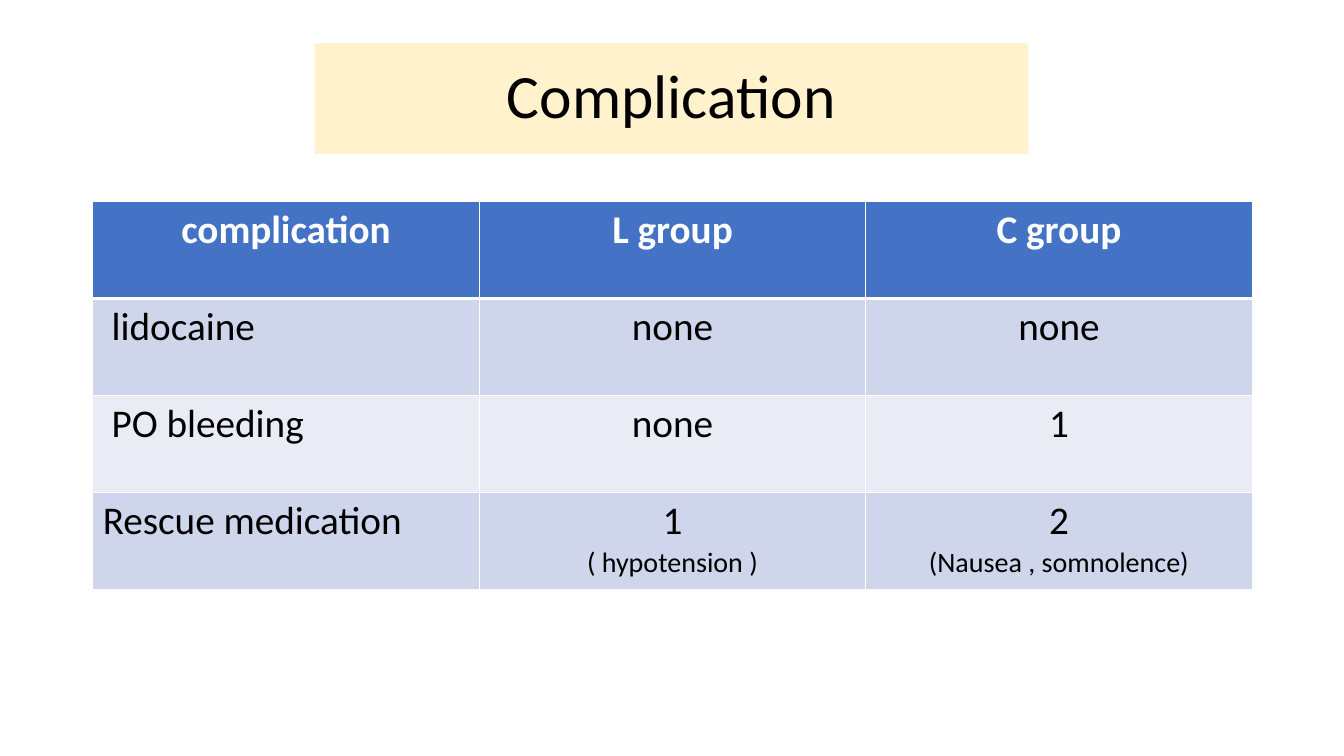
from lxml import etree
from pptx import Presentation
from pptx.dml.color import RGBColor
from pptx.enum.text import MSO_ANCHOR, MSO_AUTO_SIZE, PP_ALIGN
from pptx.oxml.ns import qn
from pptx.util import Inches, Pt

LEFT, CENTER = PP_ALIGN.LEFT, PP_ALIGN.CENTER
MIDDLE = MSO_ANCHOR.MIDDLE
NO_AUTOFIT = MSO_AUTO_SIZE.NONE
TITLE_ONLY = 5

THEME = {
    "font": "Calibri",
    "title_fill": "FFF2CC",
    "header_fill": "4472C4",
    "bands": ["CFD5EA", "E9EBF5"],
    "text": "000000",
    "light": "FFFFFF",
    "title_size": 44,
    "cell_size": 28,
    "detail_size": 20,
}

ROWS = [
    ["complication", "L group", "C group"],
    [" lidocaine", "none", "none"],
    [" PO bleeding", "none", "1"],
    ["Rescue medication", "1\n( hypotension )", "2\n(Nausea , somnolence)"],
]


def write_line(para, text, size, color, align, bold=False):
    para.alignment = align
    span = para.add_run()
    span.text = text
    formats = {"name": THEME["font"], "size": Pt(size), "bold": bold}
    for name, value in formats.items():
        setattr(span.font, name, value)
    span.font.color.rgb = RGBColor.from_string(color)


def add_border(cell, side, width):
    properties = cell._tc.get_or_add_tcPr()
    line = etree.SubElement(properties, qn(f"a:ln{side}"), w=str(Pt(width)))
    fill = etree.SubElement(line, qn("a:solidFill"))
    etree.SubElement(fill, qn("a:srgbClr"), val=THEME["light"])


deck = Presentation()
deck.slide_width, deck.slide_height = Inches(13.33), Inches(7.5)
page = deck.slides.add_slide(deck.slide_layouts[TITLE_ONLY])

# Title
title = page.shapes.title
title_box = {"left": 3.12, "top": 0.43, "width": 7.08, "height": 1.1}
for name, value in title_box.items():
    setattr(title, name, Inches(value))
title.fill.solid()
title.fill.fore_color.rgb = RGBColor.from_string(THEME["title_fill"])
frame_formats = {"vertical_anchor": MIDDLE, "word_wrap": True, "auto_size": NO_AUTOFIT}
for name, value in frame_formats.items():
    setattr(title.text_frame, name, value)
title_para = title.text_frame.paragraphs[0]
title_para.line_spacing = 0.9
write_line(title_para, "Complication", THEME["title_size"], THEME["text"], CENTER)

# Complication table
table = page.shapes.add_table(
    len(ROWS), len(ROWS[0]), Inches(0.92), Inches(2), Inches(11.5), Inches(3.85)
).table

for row, texts in enumerate(ROWS):
    header = row == 0
    fill = THEME["header_fill"] if header else THEME["bands"][(row - 1) % 2]
    color = THEME["light"] if header else THEME["text"]
    # A thick rule separates the header from the body
    widths = {"L": 1, "R": 1, "T": 3 if row == 1 else 1, "B": 3 if header else 1}

    for column, text in enumerate(texts):
        cell = table.cell(row, column)
        for side, width in widths.items():
            add_border(cell, side, width)
        cell.fill.solid()
        cell.fill.fore_color.rgb = RGBColor.from_string(fill)

        align = CENTER if header or column > 0 else LEFT
        value, *details = text.split("\n")
        frame = cell.text_frame
        write_line(frame.paragraphs[0], value, THEME["cell_size"], color, align, header)
        for detail in details:
            write_line(frame.add_paragraph(), detail, THEME["detail_size"], color, align)

deck.save("out.pptx")
